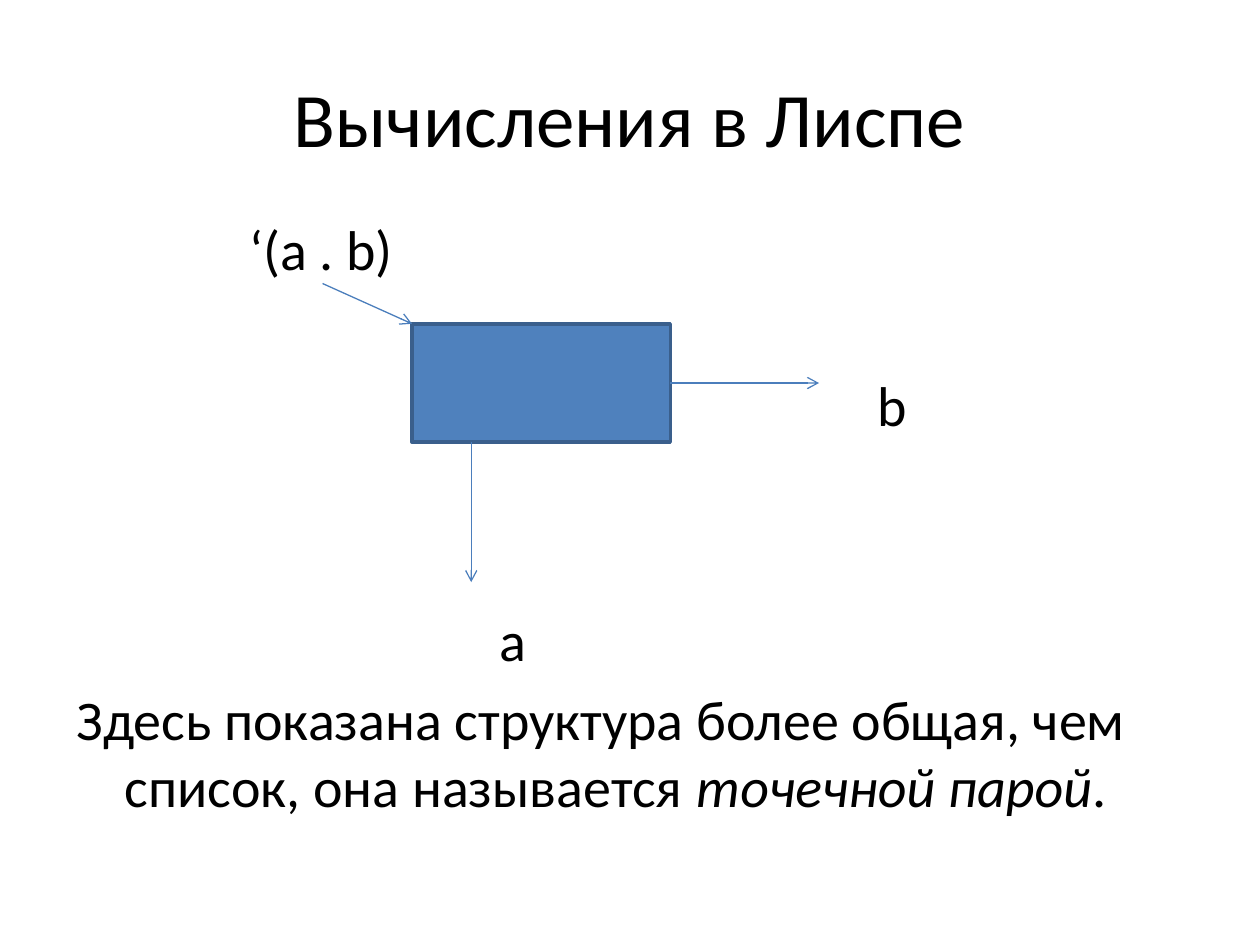
import pptx
import pptx.util
import pptx.dml.color
import pptx.enum.shapes
import pptx.enum.text
import pptx.oxml.ns
from lxml import etree

Inches, Pt = pptx.util.Inches, pptx.util.Pt
RGB = pptx.dml.color.RGBColor.from_string

# Content
TITLE = "Вычисления в Лиспе"
LABELS = [  # text, left, top, width
    ("‘(a . b)", 1.88, 1.65, 1.6),
    ("b", 6.87, 2.89, 0.6),
    ("a", 3.87, 4.76, 0.6),
]
SUMMARY = [  # text, italic
    ("Здесь показана структура более общая, чем список, она называется ", False),
    ("точечной парой", True),
    (".", False),
]
CELL = (3.27, 2.57, 2.05, 0.94)
THEME = {
    "font": "Calibri", "title": 44, "body": 32, "text": "000000",
    "fill": "4F81BD", "outline": "3A5F8C", "arrow": "4B7EBC",
}


def style(para, size):
    para.font.name = THEME["font"]
    para.font.size = Pt(size)
    para.font.color.rgb = RGB(THEME["text"])


def add_text(page, spans, left, top, width, height=0.64):
    box = page.shapes.add_textbox(*map(Inches, (left, top, width, height)))
    box.text_frame.word_wrap = True
    para = box.text_frame.paragraphs[0]
    style(para, THEME["body"])
    for text, italic in spans:
        span = para.add_run()
        span.text = text
        if italic:
            span.font.italic = True
    return para


def add_arrow(page, start, end):
    arrow = page.shapes.add_connector(
        pptx.enum.shapes.MSO_CONNECTOR.STRAIGHT, *map(Inches, start + end))
    arrow.line.color.rgb = RGB(THEME["arrow"])
    arrow.line.width = Pt(0.75)
    qn = pptx.oxml.ns.qn
    etree.SubElement(arrow.line._get_or_add_ln(), qn("a:tailEnd"), type="arrow")
    etree.SubElement(arrow._element.spPr, qn("a:effectLst"))


def main():
    deck = pptx.Presentation()
    deck.slide_width, deck.slide_height = Inches(10), Inches(7.5)
    page = deck.slides.add_slide(deck.slide_layouts[5])

    # Title
    title = page.shapes.title
    title.left, title.top, title.width, title.height = map(Inches, (0.5, 0.3, 9, 1.25))
    title.text_frame.text = TITLE
    title.text_frame.vertical_anchor = pptx.enum.text.MSO_ANCHOR.MIDDLE
    para = title.text_frame.paragraphs[0]
    para.alignment = pptx.enum.text.PP_ALIGN.CENTER
    style(para, THEME["title"])

    # Labels, and the summary with its hanging indent
    for text, left, top, width in LABELS:
        add_text(page, [(text, False)], left, top, width)
    para = add_text(page, SUMMARY, 0.51, 5.38, 9, 1.19)
    indent = para._p.get_or_add_pPr()
    indent.set("marL", str(Inches(0.38)))
    indent.set("indent", str(Inches(-0.38)))

    # Pair cell
    cell = page.shapes.add_shape(
        pptx.enum.shapes.MSO_SHAPE.RECTANGLE, *map(Inches, CELL))
    cell.shadow.inherit = False
    cell.fill.solid()
    cell.fill.fore_color.rgb = RGB(THEME["fill"])
    cell.line.color.rgb = RGB(THEME["outline"])
    cell.line.width = Pt(2)

    # Pointers: to the first part, to the second part, and into the cell
    left, top, width, height = CELL
    middle, bottom, first = top + height / 2, top + height, left + height / 2
    add_arrow(page, (first, bottom), (first, 4.62))
    add_arrow(page, (left + width, middle), (6.5, middle))
    add_arrow(page, (2.56, 2.25), (left, top))

    deck.save("out.pptx")


if __name__ == "__main__":
    main()
